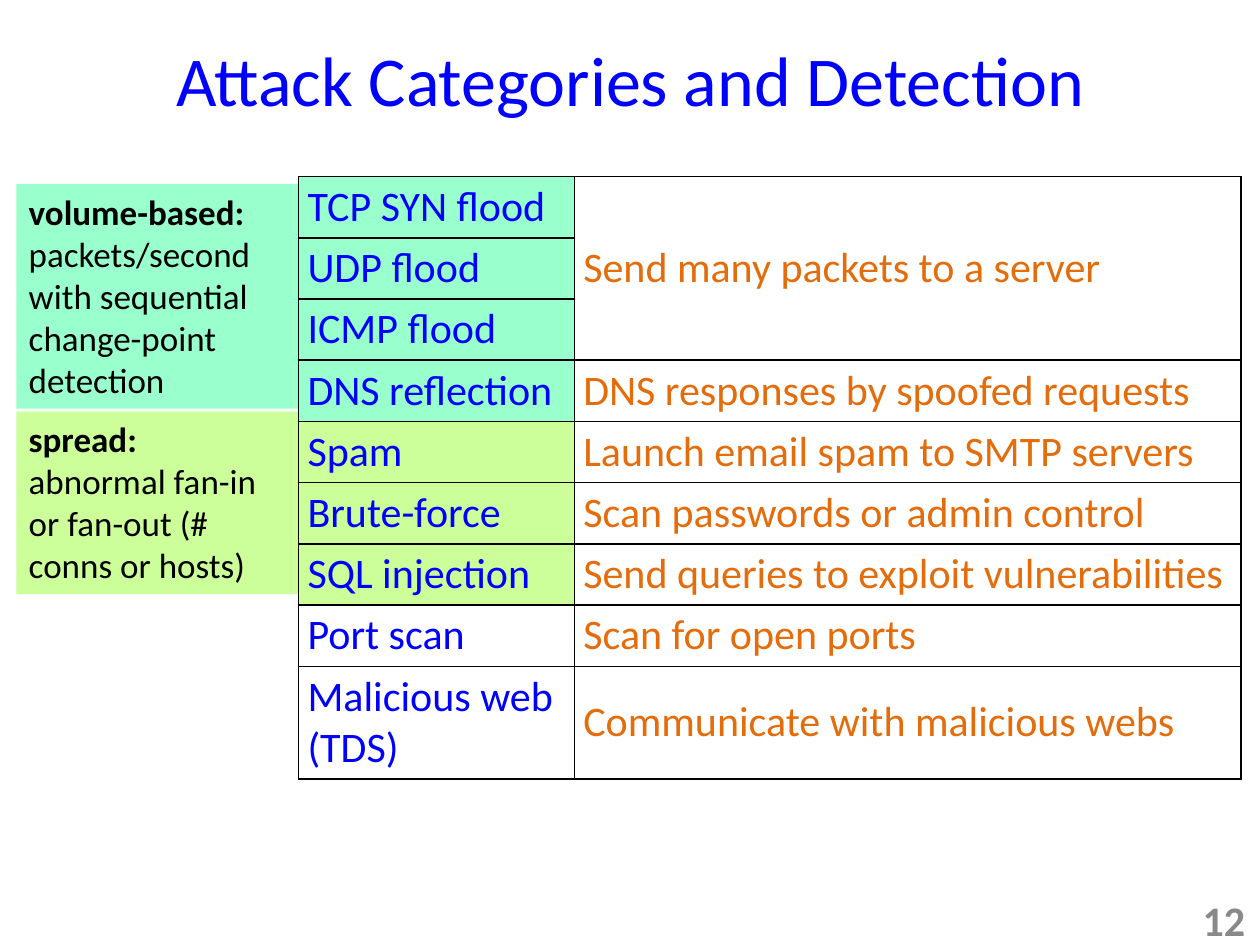
from dataclasses import dataclass

from lxml.etree import SubElement
from pptx import Presentation
from pptx.dml.color import RGBColor as RGB
from pptx.enum.shapes import MSO_SHAPE as SHAPE
from pptx.enum.text import MSO_ANCHOR as ANCHOR, PP_ALIGN as ALIGN
from pptx.oxml.ns import qn
from pptx.util import Cm, Pt


@dataclass(frozen=True)
class Theme:
    font: str = "Calibri"
    title_size: int = 40
    table_size: int = 24
    note_size: int = 20
    black: str = "000000"
    blue: str = "0000FF"
    orange: str = "E46C0A"
    grey: str = "898989"
    mint: str = "99FFCC"
    lime: str = "CCFF99"


T = Theme()

TITLE = "Attack Categories and Detection"
PAGE = "12"

# attack, description (None continues the cell above), fill
ATTACKS = [
    ("TCP SYN flood", "Send many packets to a server", T.mint),
    ("UDP flood", None, T.mint),
    ("ICMP flood", None, T.mint),
    ("DNS reflection", "DNS responses by spoofed requests", T.mint),
    ("Spam", "Launch email spam to SMTP servers", T.lime),
    ("Brute-force", "Scan passwords or admin control", T.lime),
    ("SQL injection", "Send queries to exploit vulnerabilities", T.lime),
    ("Port scan", "Scan for open ports", None),
    ("Malicious web\n(TDS)", "Communicate with malicious webs", None),
]

# top and height in cm, fill, paragraphs of (text, bold) runs
NOTES = [
    (3.71, 4.53, T.mint, [[
        ("volume-based: ", True),
        ("packets/second with sequential change-point detection", False)]]),
    (8.3, 3.68, T.lime, [
        [("spread:", True)],
        [("abnormal fan-in or fan-out (# conns or hosts)", False)]]),
]

COLUMNS = (5.56, 13.44)
ROW, LAST_ROW = 1.22, 2.25


def style(p, size, color, align=ALIGN.LEFT, bold=None):
    p.alignment = align
    p.font.name = T.font
    p.font.size = Pt(size)
    p.font.bold = bold
    p.font.color.rgb = RGB.from_string(color)


def fill_with(target, color):
    if color:
        target.fill.solid()
        target.fill.fore_color.rgb = RGB.from_string(color)
    else:
        target.fill.background()


def add_borders(cell):
    """Put lines on all four sides, ahead of the fill as the schema asks."""
    props = cell._tc.get_or_add_tcPr()
    for i, side in enumerate(("lnL", "lnR", "lnT", "lnB")):
        ln = SubElement(props, qn(f"a:{side}"), w=str(Pt(1)))
        solid = SubElement(ln, qn("a:solidFill"))
        SubElement(solid, qn("a:srgbClr"), val=T.black)
        props.insert(i, ln)


def add_title(s):
    sp = s.shapes.title
    sp.left, sp.top, sp.width, sp.height = Cm(0), Cm(0), Cm(25.4), Cm(3.18)
    tf = sp.text_frame
    tf.text = TITLE
    tf.vertical_anchor = ANCHOR.MIDDLE
    style(tf.paragraphs[0], T.title_size, T.blue, ALIGN.CENTER)


def add_note(s, top, height, color, paragraphs):
    sp = s.shapes.add_shape(SHAPE.RECTANGLE, Cm(0.33), Cm(top), Cm(5.82), Cm(height))
    sp.shadow.inherit = False
    sp.line.fill.background()
    fill_with(sp, color)
    tf = sp.text_frame
    tf.word_wrap = True
    tf.vertical_anchor = ANCHOR.TOP
    for i, runs in enumerate(paragraphs):
        p = tf.add_paragraph() if i else tf.paragraphs[0]
        style(p, T.note_size, T.black)
        for text, bold in runs:
            r = p.add_run()
            r.text, r.font.bold = text, bold


def set_cell(cell, text, color, fill, anchor):
    cell.margin_left = cell.margin_right = Cm(0.18)
    cell.margin_top = cell.margin_bottom = Cm(0.1)
    cell.vertical_anchor = anchor
    cell.text = text or ""
    for p in cell.text_frame.paragraphs:
        style(p, T.table_size, color)
    fill_with(cell, fill)
    add_borders(cell)


def add_attack_table(s):
    n = len(ATTACKS)
    heights = [ROW] * (n - 1) + [LAST_ROW]
    frame = s.shapes.add_table(n, 2, Cm(6.02), Cm(3.56), Cm(sum(COLUMNS)), Cm(sum(heights)))
    table = frame.table
    table.first_row = table.horz_banding = False
    for column, width in zip(table.columns, COLUMNS):
        column.width = Cm(width)
    for i, (attack, description, fill) in enumerate(ATTACKS):
        table.rows[i].height = Cm(heights[i])
        set_cell(table.cell(i, 0), attack, T.blue, fill, ANCHOR.TOP)
        set_cell(table.cell(i, 1), description, T.orange, None, ANCHOR.MIDDLE)
    flood_rows = [i for i, row in enumerate(ATTACKS) if row[1] is None]
    table.cell(flood_rows[0] - 1, 1).merge(table.cell(flood_rows[-1], 1))


def add_page_number(s):
    sp = s.shapes.add_textbox(Cm(19.43), Cm(18.03), Cm(5.92), Cm(1.02))
    tf = sp.text_frame
    tf.word_wrap = True
    tf.vertical_anchor = ANCHOR.MIDDLE
    tf.text = PAGE
    style(tf.paragraphs[0], T.table_size, T.grey, ALIGN.RIGHT, True)


def main():
    prs = Presentation()
    prs.slide_width, prs.slide_height = Cm(25.4), Cm(19.05)
    s = prs.slides.add_slide(prs.slide_layouts[5])
    for note in NOTES:
        add_note(s, *note)
    add_title(s)
    add_attack_table(s)
    add_page_number(s)
    prs.save("out.pptx")


if __name__ == "__main__":
    main()
